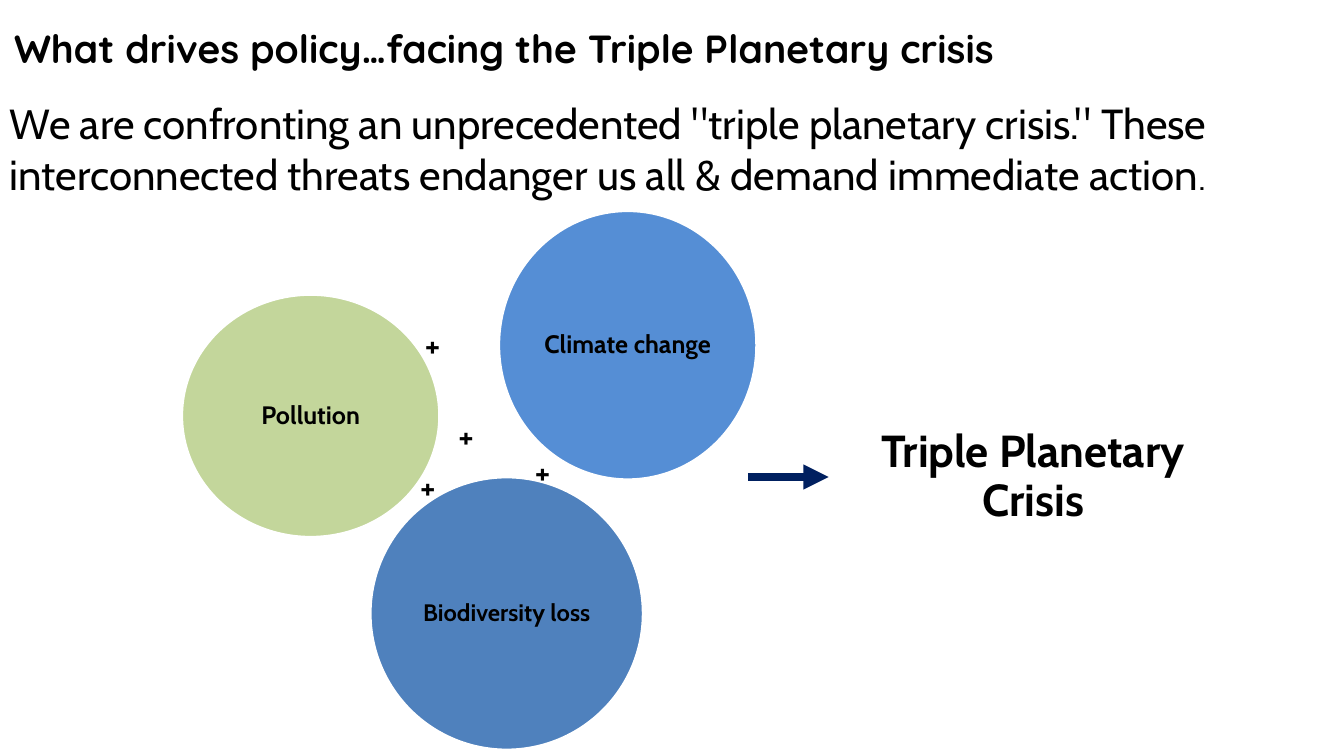
from lxml.etree import SubElement
from pptx import Presentation
from pptx.dml.color import RGBColor as RGB
from pptx.enum.shapes import MSO_CONNECTOR as LINE, MSO_SHAPE as SHAPE
from pptx.enum.text import MSO_ANCHOR as ANCHOR, PP_ALIGN as ALIGN
from pptx.oxml.ns import qn
from pptx.util import Cm, Pt

BLACK = RGB(0x00, 0x00, 0x00)
WHITE = RGB(0xFF, 0xFF, 0xFF)
GREEN = RGB(0xC3, 0xD6, 0x9B)
SKY = RGB(0x55, 0x8E, 0xD5)
BLUE = RGB(0x4F, 0x81, 0xBD)
NAVY = RGB(0x00, 0x20, 0x60)

# Boxes are left, top, width, height in cm.
TITLE = "What drives policy…facing the Triple Planetary crisis"
TITLE_BOX = (0.1, 0.48, 28.86, 1.45)
INTRO = ('We are confronting an unprecedented "triple planetary crisis." These '
         "interconnected threats endanger us all & demand immediate action")
INTRO_BOX = (0, 2.34, 33, 4.62)
RESULT = "Triple Planetary Crisis"
RESULT_BOX = (20.4, 10.62, 11.28, 2.82)
THREATS = [
    ("Biodiversity loss", 17, BLUE, (9.33, 12.02, 6.88, 6.88)),
    ("Pollution", 18, GREEN, (4.58, 7.42, 6.5, 6.12)),
    ("Climate change", 18, SKY, (12.57, 5.31, 6.5, 6.78)),
]
ARROW = (18.85, 20.88, 12.02)  # start, end, height on the slide
PLUSES = [(13.23, 11.25), (10.46, 8.05), (10.34, 11.61), (11.3, 10.34)]
PLUS_SIZE = (0.97, 1.27)


def place(box):
    return [Cm(n) for n in box]


def style(par, size, bold=True, face="Cabin"):
    font = par.font
    font.name, font.size, font.bold = face, Pt(size), bold
    font.color.rgb = BLACK


def write(shape, text, size, bold=True):
    frame = shape.text_frame
    frame.word_wrap = True
    par = frame.paragraphs[0]
    par.text = text
    style(par, size, bold)
    return par


def center(shape, par, inset):
    """Center the text both ways, with equal insets and tight lines."""
    frame = shape.text_frame
    frame.vertical_anchor = ANCHOR.MIDDLE
    frame.margin_left = frame.margin_right = Cm(inset)
    frame.margin_top = frame.margin_bottom = Cm(inset)
    par.alignment = ALIGN.CENTER
    par.line_spacing = 0.9


def add_title(slide):
    title = slide.shapes.title
    title.left, title.top, title.width, title.height = place(TITLE_BOX)
    frame = title.text_frame
    frame.text = TITLE
    frame.vertical_anchor = ANCHOR.TOP
    par = frame.paragraphs[0]
    par.alignment = ALIGN.LEFT
    style(par, 28, face="Quicksand")


def add_threat(shapes, text, size, color, box):
    oval = shapes.add_shape(SHAPE.OVAL, *place(box))
    oval.shadow.inherit = False
    oval.fill.solid()
    oval.fill.fore_color.rgb = color
    oval.line.color.rgb = WHITE
    oval.line.width = Pt(2)
    center(oval, write(oval, text, size), 0)


def add_arrow(shapes):
    start, end, y = map(Cm, ARROW)
    arrow = shapes.add_connector(LINE.STRAIGHT, start, y, end, y)
    arrow.line.color.rgb = NAVY
    arrow.line.width = Pt(6)
    SubElement(arrow.line._get_or_add_ln(), qn("a:tailEnd"), type="triangle")
    SubElement(arrow._element.spPr, qn("a:effectLst"))


def main():
    deck = Presentation()
    deck.slide_width, deck.slide_height = Cm(33.87), Cm(19.05)
    slide = deck.slides.add_slide(deck.slide_layouts[5])
    shapes = slide.shapes
    add_title(slide)

    intro = shapes.add_textbox(*place(INTRO_BOX))
    stop = write(intro, INTRO, 30, bold=False).add_run()
    stop.text = "."
    stop.font.size = Pt(24)

    result = shapes.add_textbox(*place(RESULT_BOX))
    center(result, write(result, RESULT, 32), 0.64)

    for threat in THREATS:
        add_threat(shapes, *threat)
    add_arrow(shapes)
    for spot in PLUSES:
        write(shapes.add_textbox(*place(spot + PLUS_SIZE)), "+", 24)

    deck.save("out.pptx")


if __name__ == "__main__":
    main()
